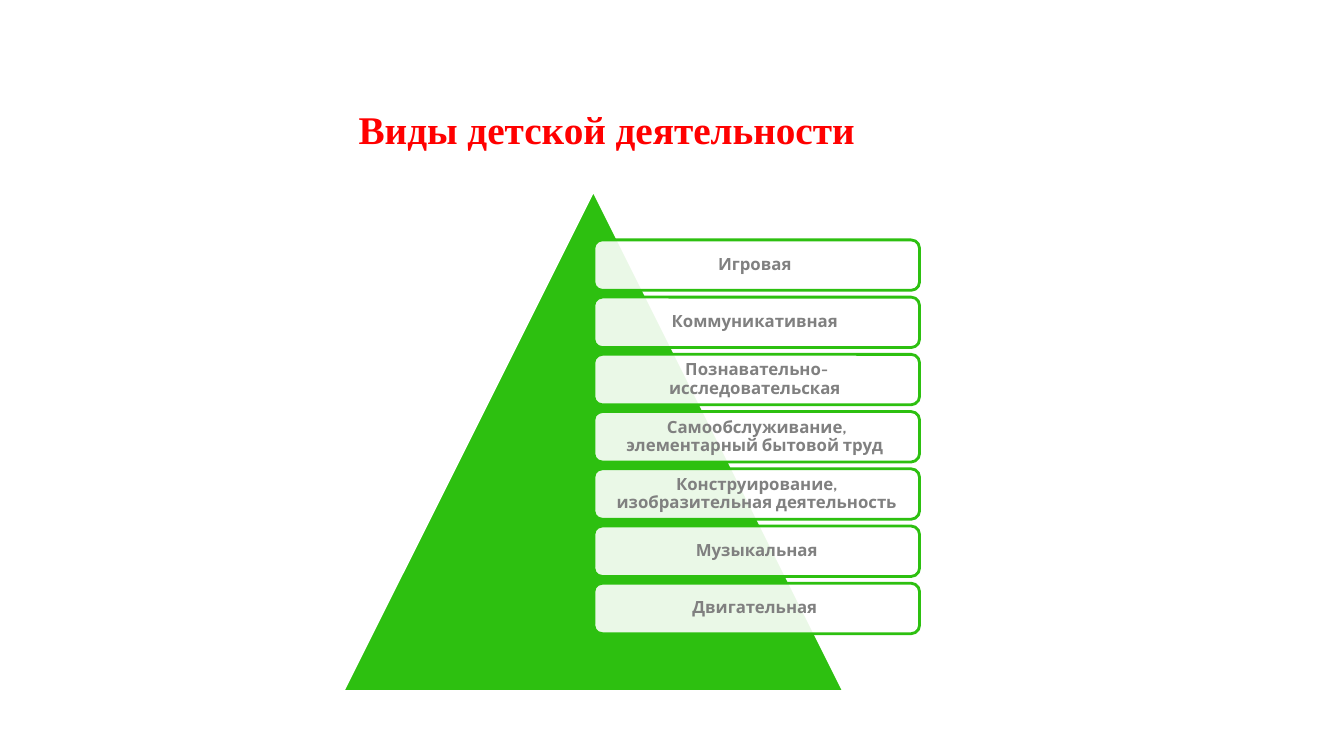
"""Build the slide on kinds of children's activity: a pyramid with a list of cards."""
from lxml.etree import SubElement
from pptx import Presentation
from pptx.dml.color import RGBColor as Rgb
from pptx.enum.shapes import MSO_SHAPE as Shape
from pptx.enum.text import MSO_ANCHOR as Anchor, PP_ALIGN as Align
from pptx.oxml.ns import qn
from pptx.util import Inches, Pt

WIDTH, HEIGHT = Inches(13.33), Inches(7.5)
COLOURS = {"green": "2DC010", "white": "FFFFFF", "red": "FF0000", "grey": "808080"}
TITLE_FONT = {"name": "Times New Roman", "size": Pt(28), "bold": True}
CARD_FONT = {"name": "Cabin", "size": Pt(12), "bold": True}
CARD_FRAME = dict.fromkeys(
    ("margin_left", "margin_right", "margin_top", "margin_bottom"), Inches(0.05))
CARD_TOP, CARD_STEP = 31.73, 7.57
ACTIVITIES = (
    "Игровая ",
    "Коммуникативная ",
    "Познавательно-исследовательская ",
    "Самообслуживание, элементарный бытовой труд ",
    "Конструирование, изобразительная деятельность",
    "Музыкальная",
    "Двигательная ",
)


def colour(name):
    """Return the named colour."""
    return Rgb.from_string(COLOURS[name])


def place(left, top, width, height):
    """Turn percentages of the slide into a position and a size."""
    return [int(side * share / 100) for side, share in
            zip((WIDTH, HEIGHT, WIDTH, HEIGHT), (left, top, width, height))]


def apply_format(target, values):
    """Set each attribute in values on target."""
    for attribute, value in values.items():
        setattr(target, attribute, value)


def write(frame, wording, font, ink, spacing=1.0):
    """Write one centred paragraph in a text frame."""
    apply_format(frame, {"word_wrap": True, "vertical_anchor": Anchor.MIDDLE})
    paragraph = frame.paragraphs[0]
    apply_format(paragraph, {"alignment": Align.CENTER, "line_spacing": spacing})
    run = paragraph.add_run()
    run.text = wording
    apply_format(run.font, font)
    run.font.color.rgb = colour(ink)


def add_outlined(slide, preset, bounds, fill, line):
    """Add a filled preset shape with a 2 pt outline."""
    figure = slide.shapes.add_shape(preset, *place(*bounds))
    figure.shadow.inherit = False
    figure.fill.solid()
    figure.fill.fore_color.rgb = colour(fill)
    figure.line.color.rgb = colour(line)
    figure.line.width = Pt(2)
    return figure


def add_title(slide, wording):
    """Add the heading above the pyramid."""
    heading = slide.shapes.add_textbox(*place(5.48, 11.87, 80.05, 10.4))
    write(heading.text_frame, wording, TITLE_FONT, "red")


def add_card(slide, row, activity):
    """Add a translucent card for one activity."""
    bounds = (44.19, CARD_TOP + row * CARD_STEP, 24.23, 6.67)
    card = add_outlined(slide, Shape.ROUNDED_RECTANGLE, bounds, "white", "green")
    fill_colour = card.fill._xPr.find(qn("a:solidFill"))[0]
    SubElement(fill_colour, qn("a:alpha"), val="90000")
    apply_format(card.text_frame, CARD_FRAME)
    write(card.text_frame, activity, CARD_FONT, "grey", 0.9)


def main():
    """Build and save the slide."""
    deck = Presentation()
    apply_format(deck, {"slide_width": WIDTH, "slide_height": HEIGHT})
    slide = deck.slides.add_slide(deck.slide_layouts[6])
    add_title(slide, "Виды детской деятельности ")
    add_outlined(slide, Shape.ISOSCELES_TRIANGLE, (25.51, 25.2, 37.28, 66.27),
                 "green", "white")
    for row, activity in enumerate(ACTIVITIES):
        add_card(slide, row, activity)
    deck.save("out.pptx")


if __name__ == "__main__":
    main()
